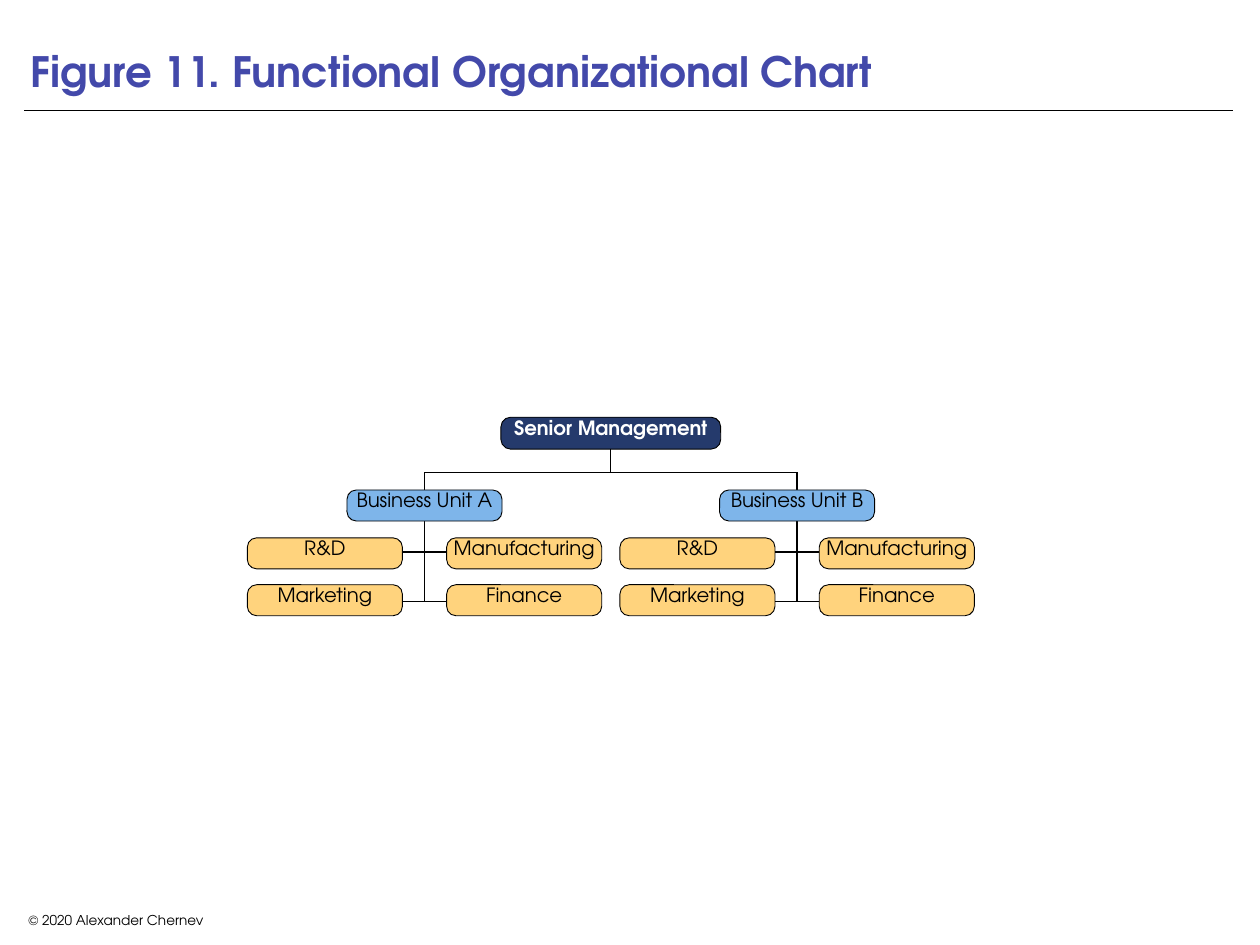
from lxml.etree import SubElement
from pptx import Presentation
from pptx.dml.color import RGBColor
from pptx.enum.shapes import MSO_CONNECTOR, MSO_SHAPE
from pptx.enum.text import MSO_ANCHOR, MSO_AUTO_SIZE, PP_ALIGN
from pptx.oxml.ns import qn
from pptx.util import Pt

FONT = "TeX Gyre Adventor"
COLORS = {
    "title": "4349AA",
    "ink": "000000",
    "white": "FFFFFF",
    "senior": "253A6C",
    "unit": "7EB5EA",
    "function": "FFD37D",
}
UNITS = ["Business Unit A", "Business Unit B"]
FUNCTION_ROWS = [
    (53.3, 64.8, ["R&D", "Manufacturing"]),
    (91.4, 105.1, ["Marketing", "Finance"]),
]
UNIT_W, UNIT_GAP = 288, 14.8
BOX_W, BOX_H = 126, 25.2
SENIOR_W, SENIOR_H = 178.6, 25.9
BUS_Y = 44.7


def rgb(name):
    return RGBColor.from_string(COLORS[name])


def write(tf, text, size, color, bold=False, inset=0.0, anchor=MSO_ANCHOR.TOP):
    tf.text = text
    tf.word_wrap = True
    tf.auto_size = MSO_AUTO_SIZE.NONE
    tf.vertical_anchor = anchor
    tf.margin_left = tf.margin_right = Pt(inset)
    tf.margin_top = tf.margin_bottom = Pt(inset)
    p = tf.paragraphs[0]
    p.alignment = PP_ALIGN.LEFT
    font = p.runs[0].font
    font.name, font.size, font.bold = FONT, Pt(size), bold
    font.color.rgb = rgb(color)
    return p


def add_line(s, x1, y1, x2, y2, weight=1.0):
    line = s.shapes.add_connector(
        MSO_CONNECTOR.STRAIGHT, Pt(x1), Pt(y1), Pt(x2), Pt(y2))
    line.line.color.rgb = rgb("ink")
    line.line.width = Pt(weight)
    SubElement(line._element.spPr, qn("a:effectLst"))


def add_box(s, x, y, w, h, text, fill, color="ink", bold=False):
    sp = s.shapes.add_shape(
        MSO_SHAPE.ROUNDED_RECTANGLE, Pt(x), Pt(y), Pt(w), Pt(h))
    sp.adjustments[0] = 0.3
    sp.shadow.inherit = False
    sp.fill.solid()
    sp.fill.fore_color.rgb = rgb(fill)
    sp.line.color.rgb = rgb("ink")
    sp.line.width = Pt(0.75)
    p = write(sp.text_frame, text, 16, color, bold)
    p.alignment = PP_ALIGN.CENTER
    p.line_spacing = 0.8


def add_title(s, x, y, w, h):
    title = s.shapes.title
    title.left, title.top, title.width, title.height = Pt(x), Pt(y), Pt(w), Pt(h)
    write(title.text_frame, "Figure 11. Functional Organizational Chart",
          34, "title", True, 5, MSO_ANCHOR.BOTTOM)
    rule_y = y + h + 6.5
    add_line(s, x, rule_y, x + w, rule_y, 0.5)


def add_footer(s, x, y, w, h):
    sp = s.shapes.add_textbox(Pt(x), Pt(y), Pt(w), Pt(h))
    write(sp.text_frame, "© 2020 Alexander Chernev", 11, "ink",
          inset=5, anchor=MSO_ANCHOR.BOTTOM)


def add_unit(s, x, y, w, name):
    center = x + w / 2
    right = x + w - BOX_W
    add_line(s, center, y, center, y + FUNCTION_ROWS[-1][1])
    for row_y, branch_y, functions in FUNCTION_ROWS:
        add_line(s, x + BOX_W, y + branch_y, right, y + branch_y)
        for box_x, function in zip((x, right), functions):
            add_box(s, box_x, y + row_y, BOX_W, BOX_H, function, "function")
    add_box(s, center - BOX_W / 2, y + 14.4, BOX_W, BOX_H, name, "unit")


def add_org_chart(s, x, y, w):
    center = x + w / 2
    bus_y = y + BUS_Y
    add_line(s, x + UNIT_W / 2, bus_y, x + w - UNIT_W / 2, bus_y)
    add_line(s, center, y + SENIOR_H, center, bus_y)
    add_box(s, center - SENIOR_W / 2, y, SENIOR_W, SENIOR_H,
            "Senior Management", "senior", "white", True)
    for i, name in enumerate(UNITS):
        add_unit(s, x + i * (UNIT_W + UNIT_GAP), bus_y, UNIT_W, name)


def main():
    prs = Presentation()
    prs.slide_width, prs.slide_height = Pt(1024), Pt(768)
    s = prs.slides.add_slide(prs.slide_layouts[5])
    add_title(s, 19.6, 0, 982.4, 82.8)
    add_footer(s, 18, 736.6, 250, 23)
    add_org_chart(s, 201, 339.1, 2 * UNIT_W + UNIT_GAP)
    prs.save("out.pptx")


if __name__ == "__main__":
    main()
